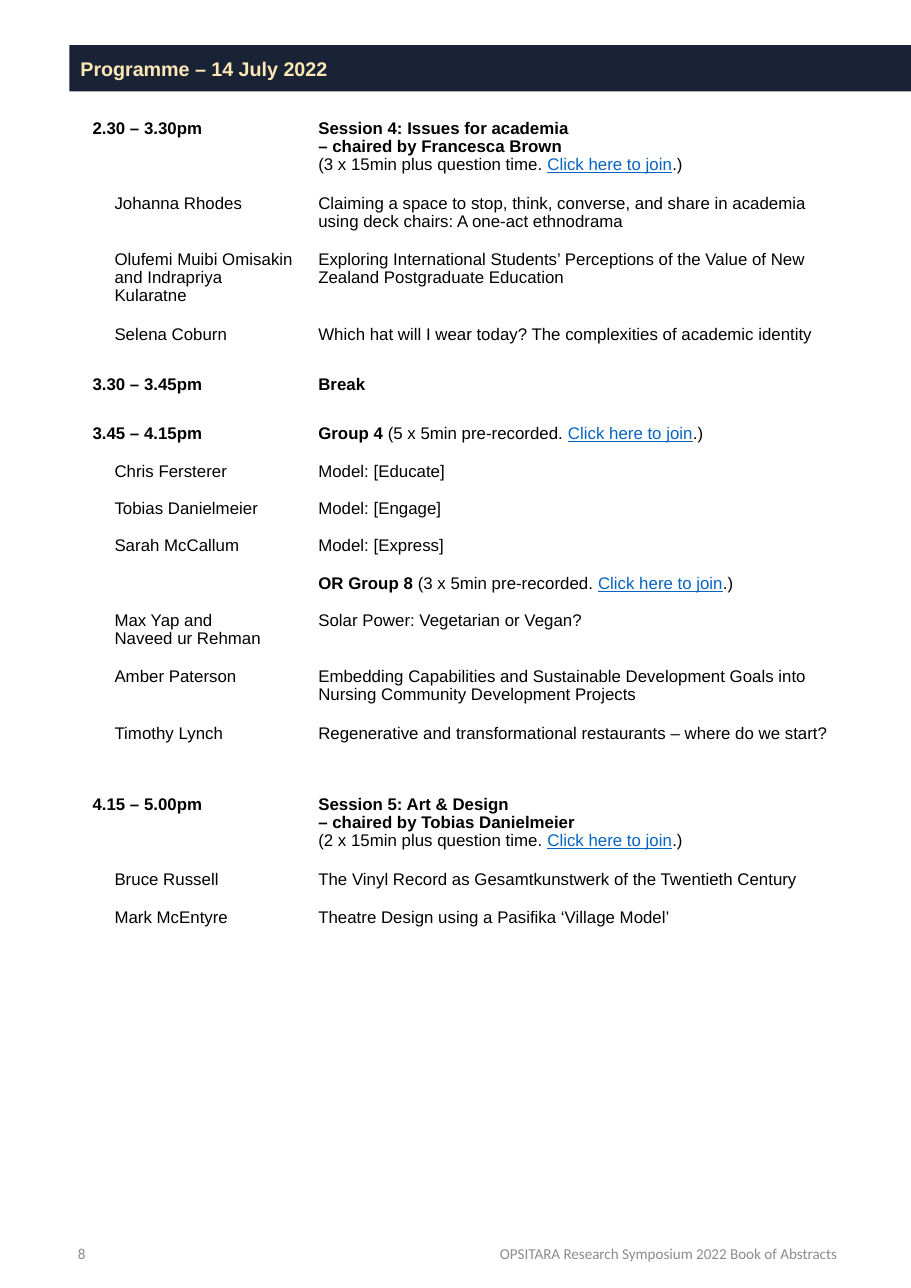
from pptx import Presentation
from pptx import util as u
from pptx.dml.color import RGBColor
from pptx.enum import text

COLORS = {"ink": "000000", "link": "0563C1", "band": "1A2235", "cream": "FEE8B6", "grey": "8C8C8C"}

TITLE = "Programme – 14 July 2022"
FOOTERS = [
    ("OPSITARA Research Symposium 2022 Book of Abstracts", 4.25, 3.45, text.PP_ALIGN.RIGHT),
    ("8", 0.61, 1.86, text.PP_ALIGN.LEFT),
]


def joining(details):
    return [(f"({details}. ", "plain"), ("Click here to join", "link"), (".)", "plain")]


def session(name, chair, details):
    return [[(name, "bold")], [(f"– chaired by {chair}", "bold")], joining(details)]


def group(name, details):
    return [[(f"{name} ", "bold"), *joining(details)]]


def talk(*lines):
    return [[(line, "plain")] for line in lines]


def heading(line):
    return [[(line, "bold")]]


PROGRAMME = [
    (0.68, heading("2.30 – 3.30pm"),
     session("Session 4: Issues for academia", "Francesca Brown", "3 x 15min plus question time")),
    (0.51, talk("Johanna Rhodes"),
     talk("Claiming a space to stop, think, converse, and share in academia using deck chairs: A one-act ethnodrama")),
    (0.68, talk("Olufemi Muibi Omisakin and Indrapriya Kularatne"),
     talk("Exploring International Students’ Perceptions of the Value of New Zealand Postgraduate Education")),
    (0.45, talk("Selena Coburn"), talk("Which hat will I wear today? The complexities of academic identity")),
    (0.45, heading("3.30 – 3.45pm"), heading("Break")),
    (0.34, heading("3.45 – 4.15pm"), group("Group 4", "5 x 5min pre-recorded")),
    (0.34, talk("Chris Fersterer"), talk("Model: [Educate]")),
    (0.34, talk("Tobias Danielmeier"), talk("Model: [Engage]")),
    (0.34, talk("Sarah McCallum"), talk("Model: [Express]")),
    (0.34, [], group("OR Group 8", "3 x 5min pre-recorded")),
    (0.51, talk("Max Yap and", "Naveed ur Rehman"), talk("Solar Power: Vegetarian or Vegan?")),
    (0.51, talk("Amber Paterson"),
     talk("Embedding Capabilities and Sustainable Development Goals into Nursing Community Development Projects")),
    (0.65, talk("Timothy Lynch"), talk("Regenerative and transformational restaurants – where do we start?")),
    (0.68, heading("4.15 – 5.00pm"),
     session("Session 5: Art & Design", "Tobias Danielmeier", "2 x 15min plus question time")),
    (0.34, talk("Bruce Russell"), talk("The Vinyl Record as Gesamtkunstwerk of the Twentieth Century")),
    (0.34, talk("Mark McEntyre"), talk("Theatre Design using a Pasifika ‘Village Model’")),
]
COLUMNS = [2.15, 4.85]
INSETS = [0.21, 0.11]
SPEAKER_INDENT = 0.2

STYLES = {
    "plain": {"size": u.Pt(11), "name": "Arial", "bold": False, "color": "ink"},
    "bold": {"size": u.Pt(11), "name": "Arial", "bold": True, "color": "ink"},
    "link": {"size": u.Pt(11), "name": "Arial", "bold": False, "underline": True, "color": "link"},
    "title": {"size": u.Pt(12.9), "name": "Arial", "bold": True, "color": "cream"},
    "footer": {"size": u.Pt(9.9), "name": "Calibri", "color": "grey"},
}


def rgb(color):
    return RGBColor.from_string(COLORS[color])


def add_span(para, words, style):
    span = para.add_run()
    span.text = words
    for key, value in STYLES[style].items():
        if key == "color":
            span.font.color.rgb = rgb(value)
        else:
            setattr(span.font, key, value)


def fill_cell(cell, lines, inset, indent):
    cell.fill.background()
    gap = 0.08 if lines else 0
    margins = {"margin_left": inset, "margin_right": 0.1, "margin_top": gap, "margin_bottom": gap}
    for key, value in margins.items():
        setattr(cell, key, u.Inches(value))
    for index, spans in enumerate(lines):
        frame = cell.text_frame
        para = frame.add_paragraph() if index else frame.paragraphs[0]
        para.line_spacing = 0.96
        if indent and spans[0][1] == "plain":
            properties = para._p.get_or_add_pPr()
            properties.set("marL", str(u.Inches(indent)))
            properties.set("indent", "0")
        for words, style in spans:
            add_span(para, words, style)


def add_programme(page):
    heights = [row[0] for row in PROGRAMME]
    table = page.shapes.add_table(
        len(PROGRAMME), len(COLUMNS), u.Inches(0.63), u.Inches(1.01),
        u.Inches(sum(COLUMNS)), u.Inches(sum(heights))).table
    table.first_row = table.horz_banding = False
    for column, width in zip(table.columns, COLUMNS):
        column.width = u.Inches(width)
    for row, (height, *cells) in zip(table.rows, PROGRAMME):
        row.height = u.Inches(height)
        for cell, lines, inset, indent in zip(row.cells, cells, INSETS, (SPEAKER_INDENT, 0)):
            fill_cell(cell, lines, inset, indent)


def set_line(box, words, style, align):
    frame = box.text_frame
    frame.word_wrap = True
    frame.auto_size = text.MSO_AUTO_SIZE.NONE
    frame.vertical_anchor = text.MSO_ANCHOR.MIDDLE
    para = frame.paragraphs[0]
    para.alignment = align
    add_span(para, words, style)


def add_title(page):
    title = page.shapes.title
    place = {"left": 0.63, "top": 0.41, "width": 7.64, "height": 0.42}
    for key, value in place.items():
        setattr(title, key, u.Inches(value))
    title.fill.solid()
    title.fill.fore_color.rgb = rgb("band")
    title.text_frame.margin_top = title.text_frame.margin_bottom = 0
    set_line(title, TITLE, "title", text.PP_ALIGN.LEFT)


def main():
    deck = Presentation()
    deck.slide_width, deck.slide_height = u.Inches(8.27), u.Inches(11.69)
    page = deck.slides.add_slide(deck.slide_layouts[5])
    add_title(page)
    add_programme(page)
    for words, left, width, align in FOOTERS:
        box = page.shapes.add_textbox(u.Inches(left), u.Inches(11.07), u.Inches(width), u.Inches(0.62))
        set_line(box, words, "footer", align)
    deck.save("out.pptx")


if __name__ == "__main__":
    main()
